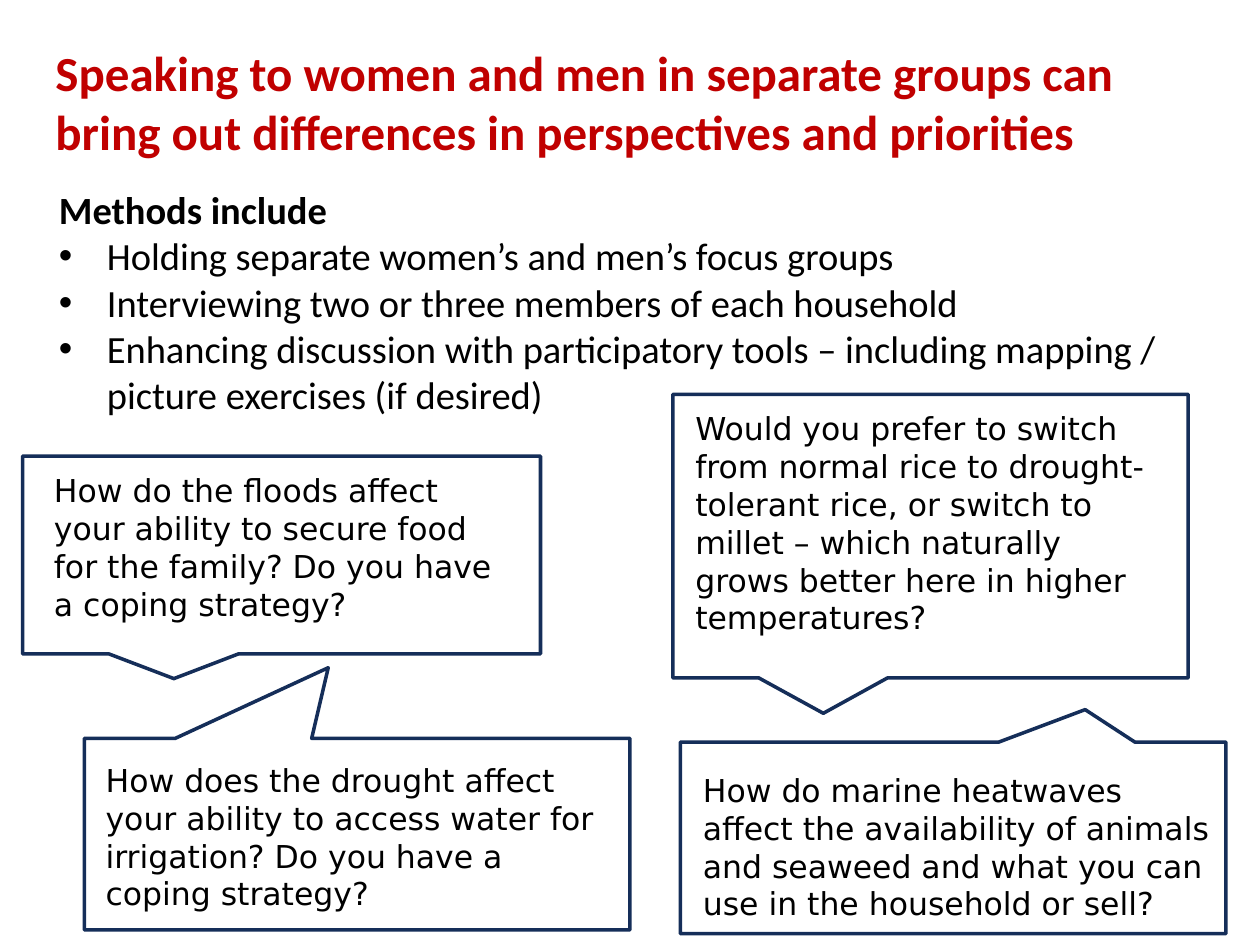
from lxml import etree
from pptx import Presentation
from pptx.dml.color import RGBColor
from pptx.enum.shapes import MSO_SHAPE
from pptx.enum.text import MSO_ANCHOR, PP_ALIGN
from pptx.oxml.ns import qn
from pptx.util import Inches, Pt

CALLOUT = MSO_SHAPE.RECTANGULAR_CALLOUT
TOP = MSO_ANCHOR.TOP
LEFT = PP_ALIGN.LEFT

RED = RGBColor(0xC0, 0x00, 0x00)
BLACK = RGBColor(0x00, 0x00, 0x00)
NAVY = RGBColor(0x15, 0x2E, 0x59)

HEAD_FONT = "Calibri"
QUOTE_FONT = "DejaVu Sans"

COLS, ROWS = 100, 75
SLIDE_W, SLIDE_H = Inches(10), Inches(7.5)
COL, ROW = SLIDE_W / COLS, SLIDE_H / ROWS
INDENT = Inches(0.38)

TITLE = ("Speaking to women and men in separate groups can bring out "
         "differences in perspectives and priorities")
METHODS = [
    "Holding separate women’s and men’s focus groups",
    "Interviewing two or three members of each household",
    "Enhancing discussion with participatory tools – including mapping / "
    "picture exercises (if desired)",
]
QUESTIONS = [
    ((1.8, 36.2, 41.1, 15.7), (-0.208, 0.625), (1.5, 0.7, 38.6, 13.1),
     "How do the floods affect your ability to secure food for the family? "
     "Do you have a coping strategy?"),
    ((6.7, 58.6, 43.3, 15.2), (-0.053, -0.869), (0.7, 1.3, 41.7, 13.1),
     "How does the drought affect your ability to access water for "
     "irrigation? Do you have a coping strategy?"),
    ((53.4, 31.3, 40.9, 22.5), (-0.208, 0.625), (0.8, 0.7, 38.6, 19.2),
     "Would you prefer to switch from normal rice to drought-tolerant rice, "
     "or switch to millet – which naturally grows better here in higher "
     "temperatures?"),
    ((54, 58.9, 43.3, 15.2), (0.242, -0.67), (0.8, 1.8, 42.5, 13.1),
     "How do marine heatwaves affect the availability of animals and seaweed "
     "and what you can use in the household or sell?"),
]


def place(box):
    x, y, w, h = box
    return round(x * COL), round(y * ROW), round(w * COL), round(h * ROW)


def add_text(s, box, lines, font, size, color, bold=False):
    tf = s.shapes.add_textbox(*place(box)).text_frame
    tf.word_wrap = True
    tf.vertical_anchor = TOP
    tf.text = "\n".join(lines)
    for p in tf.paragraphs:
        p.alignment = LEFT
        for r in p.runs:
            r.font.name = font
            r.font.size = Pt(size)
            r.font.bold = bold
            r.font.color.rgb = color
    return tf


def add_bullet(p):
    pPr = p._p.get_or_add_pPr()
    pPr.set("marL", str(INDENT))
    pPr.set("indent", str(-INDENT))
    etree.SubElement(pPr, qn("a:buFont")).set("typeface", "Arial")
    etree.SubElement(pPr, qn("a:buChar")).set("char", "•")


def add_title(s, box):
    tf = add_text(s, box, [TITLE], HEAD_FONT, 28, RED, bold=True)
    tf.margin_left = tf.margin_right = tf.margin_top = tf.margin_bottom = 0


def add_methods(s, box):
    tf = add_text(s, box, ["Methods include"] + METHODS, HEAD_FONT, 22, BLACK)
    heading, *items = tf.paragraphs
    heading.runs[0].font.bold = True
    for p in items:
        add_bullet(p)


def add_question(s, box, tip, inset, text):
    sp = s.shapes.add_shape(CALLOUT, *place(box))
    sp.shadow.inherit = False
    sp.fill.background()
    sp.line.color.rgb = NAVY
    sp.line.width = Pt(2)
    sp.adjustments[0], sp.adjustments[1] = tip
    dx, dy, w, h = inset
    add_text(s, (box[0] + dx, box[1] + dy, w, h), [text], QUOTE_FONT, 18, BLACK)


def main():
    prs = Presentation()
    prs.slide_width, prs.slide_height = SLIDE_W, SLIDE_H
    s = prs.slides.add_slide(prs.slide_layouts[6])
    add_title(s, (4.4, 3.4, 85.5, 10.9))
    add_methods(s, (3.7, 14.3, 94.7, 22.6))
    for question in QUESTIONS:
        add_question(s, *question)
    prs.save("out.pptx")


if __name__ == "__main__":
    main()
